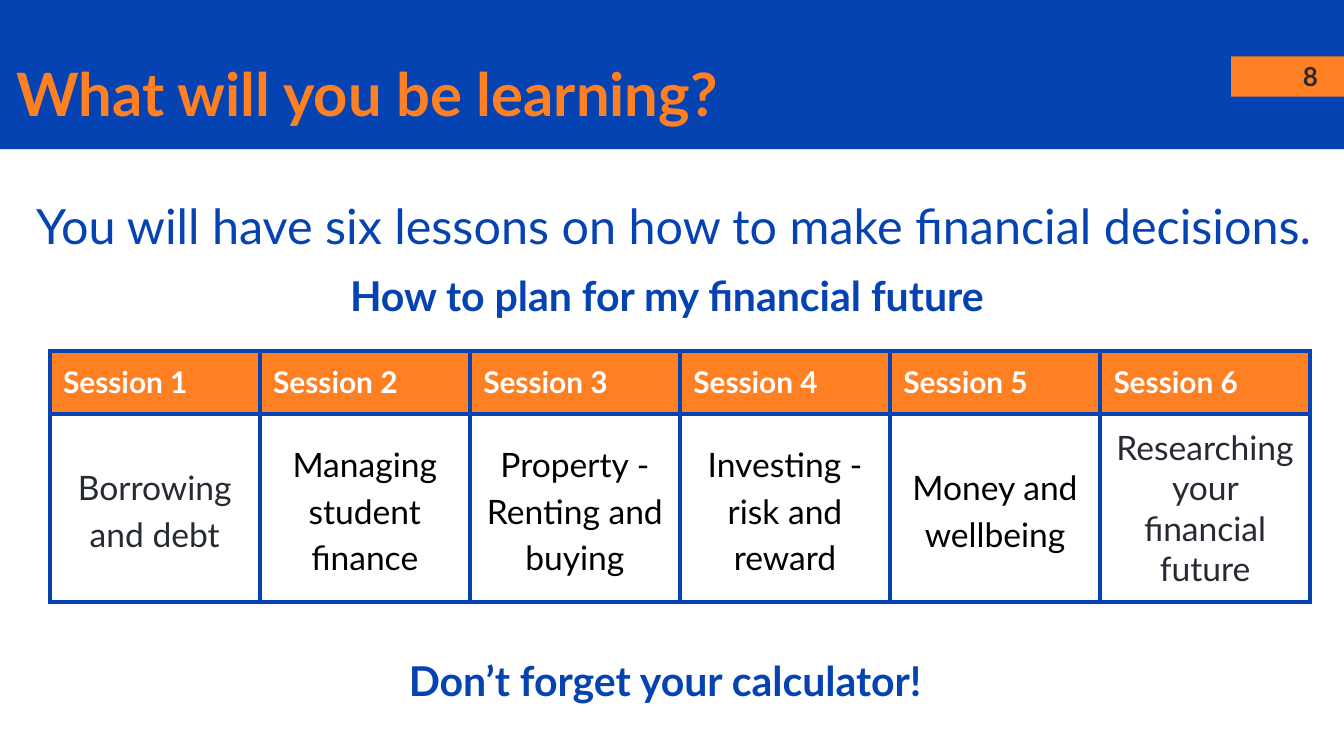
from dataclasses import dataclass

from lxml import etree
from pptx import Presentation
from pptx.dml.color import RGBColor
from pptx.enum.shapes import MSO_SHAPE
from pptx.enum.text import MSO_ANCHOR, MSO_AUTO_SIZE, PP_ALIGN
from pptx.oxml.ns import qn
from pptx.util import Inches, Pt

RECT = MSO_SHAPE.RECTANGLE
TOP, MIDDLE = MSO_ANCHOR.TOP, MSO_ANCHOR.MIDDLE
LEFT, CENTER = PP_ALIGN.LEFT, PP_ALIGN.CENTER
NO_FIT = MSO_AUTO_SIZE.NONE
TITLE_ONLY = 5


@dataclass(frozen=True)
class Theme:
    font: str = "Lato"
    blue: str = "0543B3"
    orange: str = "FF8022"
    dark: str = "262A33"
    black: str = "000000"
    white: str = "FFFFFF"
    title: int = 32
    lead: int = 26
    heading: int = 22
    body: int = 18
    header: int = 16
    number: int = 14
    border: float = 2.25


T = Theme()

SESSIONS = [
    (["Borrowing and debt"], T.dark),
    (["Managing student finance"], T.black),
    (["Property -", "Renting and buying"], T.black),
    (["Investing - risk and reward"], T.black),
    (["Money and wellbeing"], T.black),
    (["Researching your financial future"], T.dark),
]


def set_margins(target, inset):
    target.margin_left = target.margin_right = Inches(inset)
    target.margin_top = target.margin_bottom = Inches(inset)


def write(tf, lines, size, color, bold=False, align=LEFT, spacing=1.0):
    for i, line in enumerate(lines):
        p = tf.paragraphs[0] if i == 0 else tf.add_paragraph()
        p.alignment = align
        p.line_spacing = spacing
        p.space_before = Pt(0)
        r = p.add_run()
        r.text = line
        r.font.name = T.font
        r.font.size = Pt(size)
        r.font.bold = bold
        r.font.color.rgb = RGBColor.from_string(color)


def add_block(s, box, color):
    sp = s.shapes.add_shape(RECT, *map(Inches, box))
    sp.shadow.inherit = False
    sp.fill.solid()
    sp.fill.fore_color.rgb = RGBColor.from_string(color)
    sp.line.fill.background()
    return sp


def add_text(s, box, text, size, color, anchor=TOP, **style):
    tf = s.shapes.add_textbox(*map(Inches, box)).text_frame
    tf.word_wrap = True
    tf.vertical_anchor = anchor
    set_margins(tf, 0.1)
    write(tf, [text], size, color, **style)


def add_header(s, box, title, number):
    x, y, w, h = box
    band = add_block(s, box, T.blue)
    sp = s.shapes.title
    band.element.addnext(sp.element)  # bring the title in front of the band
    sp.left, sp.top = Inches(x + 0.12), Inches(y + 0.34)
    sp.width, sp.height = Inches(w - 1.22), Inches(0.85)
    tf = sp.text_frame
    tf.auto_size = NO_FIT
    tf.word_wrap = True
    tf.vertical_anchor = TOP
    set_margins(tf, 0)
    write(tf, [title], T.title, T.orange, bold=True, spacing=1.15)

    add_block(s, (x + w - 0.84, y + 0.42, 0.84, 0.3), T.orange)
    add_text(s, (x + w - 0.51, y + 0.44, 0.52, 0.25), number, T.number, T.dark,
             anchor=MIDDLE, bold=True, align=CENTER)


def add_borders(cell):
    tc_pr = cell._tc.get_or_add_tcPr()
    for side in ("a:lnL", "a:lnR", "a:lnT", "a:lnB"):
        ln = etree.SubElement(tc_pr, qn(side), w=str(Pt(T.border)))
        fill = etree.SubElement(ln, qn("a:solidFill"))
        etree.SubElement(fill, qn("a:srgbClr"), val=T.blue)


def style_cell(cell, fill, inset, anchor):
    add_borders(cell)
    cell.fill.solid()
    cell.fill.fore_color.rgb = RGBColor.from_string(fill)
    cell.vertical_anchor = anchor
    set_margins(cell, inset)


def add_sessions(s, box, row_heights):
    table = s.shapes.add_table(2, len(SESSIONS), *map(Inches, box)).table
    for row, height in zip(table.rows, row_heights):
        row.height = Inches(height)
    for i, (lines, color) in enumerate(SESSIONS):
        table.columns[i].width = Inches(box[2] / len(SESSIONS))
        head, body = table.cell(0, i), table.cell(1, i)
        style_cell(head, T.orange, 0.1, TOP)
        write(head.text_frame, [f"Session {i + 1}"], T.header, T.white, bold=True)
        last = i == len(SESSIONS) - 1
        style_cell(body, T.white, 0.1 if last else 0.07, MIDDLE)
        write(body.text_frame, lines, T.body, color, align=CENTER,
              spacing=1.0 if last else 1.15)


def main():
    prs = Presentation()
    prs.slide_width = Inches(10)
    prs.slide_height = prs.slide_width * 9 // 16
    s = prs.slides.add_slide(prs.slide_layouts[TITLE_ONLY])
    add_header(s, (0, 0, 10, 1.11), "What will you be learning?", "8")
    add_text(s, (0.17, 1.29, 9.73, 0.64),
             "You will have six lessons on how to make financial decisions.",
             T.lead, T.blue, spacing=1.15)
    add_text(s, (2.09, 1.91, 5.82, 0.57), "How to plan for my financial future ",
             T.heading, T.blue, bold=True, align=CENTER)
    add_sessions(s, (0.37, 2.61, 9.38, 1.87), (0.47, 1.4))
    add_text(s, (2.66, 4.78, 4.58, 0.57), "Don’t forget your calculator!",
             T.heading, T.blue, bold=True, align=CENTER)
    prs.save("out.pptx")


if __name__ == "__main__":
    main()
